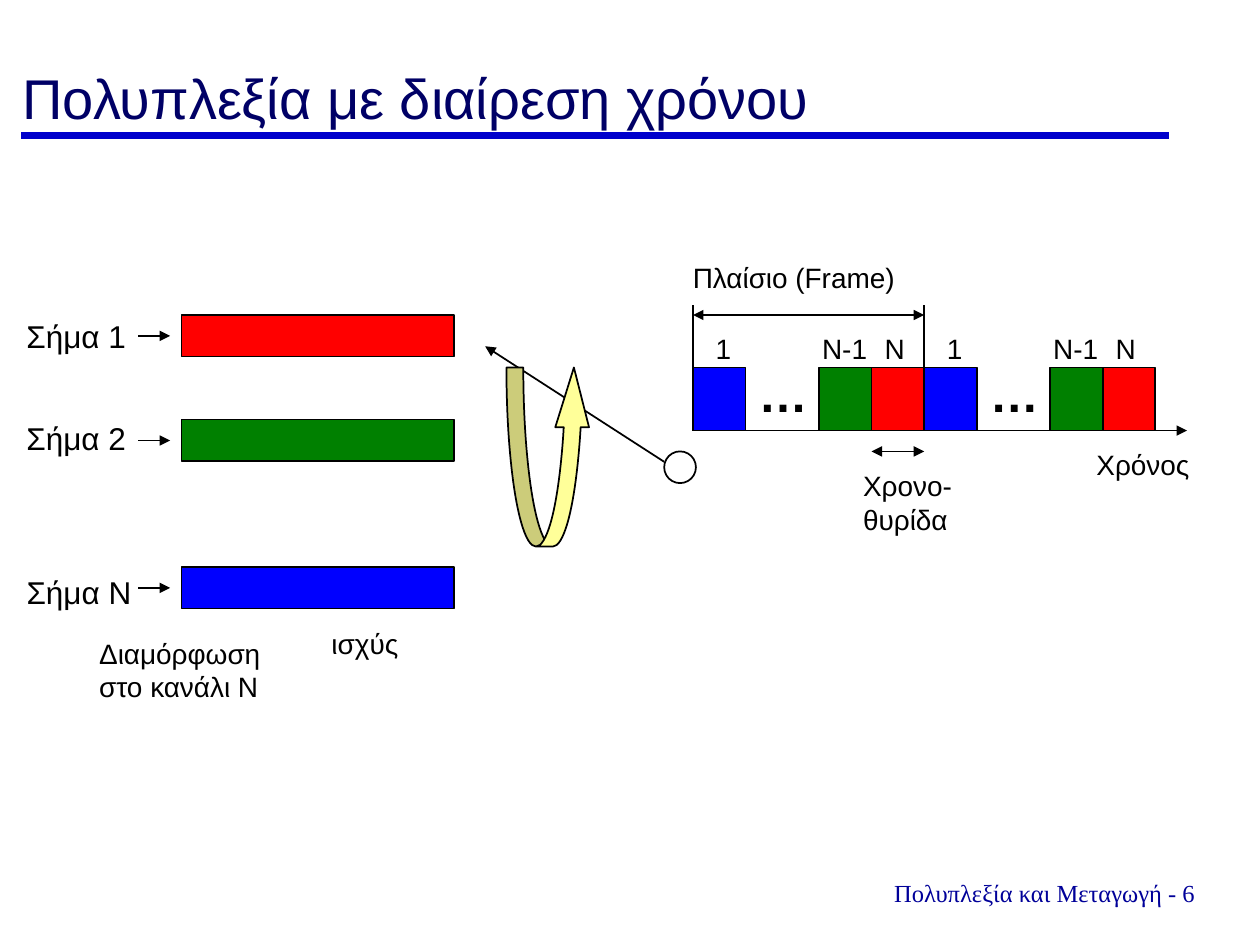
from lxml import etree
from pptx import Presentation
from pptx import util as u
from pptx.dml.color import RGBColor
from pptx.enum import shapes, text
from pptx.oxml.ns import qn

RED, GREEN, BLUE, BLACK = "FF0000", "008000", "0000FF", "000000"
ALIGN, SHAPE = text.PP_ALIGN, shapes.MSO_SHAPE


def rgb(value):
    return RGBColor.from_string(value)


class Deck:
    """Holds the style and the current slide; lengths are in centimetres."""

    font = {"name": "Arial", "size": 16, "bold": False, "color": BLACK}

    def __init__(self, width, height):
        self.prs = Presentation()
        self.prs.slide_width, self.prs.slide_height = u.Cm(width), u.Cm(height)
        self.s = self.prs.slides.add_slide(self.prs.slide_layouts[5])

    def add_words(self, tf, words, align, **font):
        style = {**self.font, **font}
        p = tf.paragraphs[0]
        p.alignment = align
        r = p.add_run()
        r.text = words
        r.font.color.rgb = rgb(style.pop("color"))
        style["size"] = u.Pt(style["size"])
        for name, value in style.items():
            setattr(r.font, name, value)

    def title(self, words, *box, **font):
        sp = self.s.shapes.title
        for name, value in zip(("left", "top", "width", "height"), box):
            setattr(sp, name, u.Cm(value))
        tf = sp.text_frame
        frame = {"vertical_anchor": text.MSO_ANCHOR.BOTTOM, "word_wrap": True,
                 "auto_size": text.MSO_AUTO_SIZE.NONE}
        for name, value in frame.items():
            setattr(tf, name, value)
        self.add_words(tf, words, ALIGN.LEFT, **font)

    def label(self, words, *box, align=ALIGN.RIGHT, wrap=False, **font):
        tf = self.s.shapes.add_textbox(*map(u.Cm, box)).text_frame
        tf.word_wrap = wrap
        tf.auto_size = text.MSO_AUTO_SIZE.SHAPE_TO_FIT_TEXT
        self.add_words(tf, words, align, **font)

    def shape(self, kind, *box, fill=None):
        sp = self.s.shapes.add_shape(kind, *map(u.Cm, box))
        sp.shadow.inherit = False
        if fill:
            sp.fill.solid()
            sp.fill.fore_color.rgb = rgb(fill)
        else:
            sp.fill.background()
        sp.line.color.rgb = rgb(BLACK)
        sp.line.width = u.Pt(1)
        return sp

    def line(self, *ends, color=BLACK, width=1, arrows=()):
        """Draw a straight line; arrows names its headEnd and/or tailEnd."""
        c = self.s.shapes.add_connector(shapes.MSO_CONNECTOR.STRAIGHT, *map(u.Cm, ends))
        c.line.color.rgb = rgb(color)
        c.line.width = u.Pt(width)
        ln = c._element.spPr.find(qn("a:ln"))
        for end in arrows:
            etree.SubElement(ln, qn(f"a:{end}"), type="triangle")
        etree.SubElement(c._element.spPr, qn("a:effectLst"))


def signals(d):
    rows = (("Σήμα 1", 6.35, 6.27, 2.51, RED),
            ("Σήμα 2", 8.46, 8.33, 2.51, GREEN),
            ("Σήμα N", 11.43, 11.43, 2.62, BLUE))
    for name, top, label_top, label_width, fill in rows:
        d.label(name, 0.28, label_top, label_width, 1.02, size=18)
        d.line(2.79, top + 0.42, 3.43, top + 0.42, arrows=["tailEnd"])
        d.shape(SHAPE.RECTANGLE, 3.66, top, 5.5, 0.84, fill=fill)
    d.label("ισχύς", 6.43, 12.5, 1.85, 0.94)
    d.label("Διαμόρφωση στο κανάλι N", 1.75, 12.7, 4.57, 1.63, align=ALIGN.LEFT, wrap=True)


def rotating_switch(d):
    d.shape(SHAPE.OVAL, 13.39, 9.1, 0.64, 0.64)
    d.line(13.39, 9.31, 9.78, 6.98, arrows=["tailEnd"])
    turn = d.shape(SHAPE.CURVED_DOWN_ARROW, 10.21, 7.41, 1.7, 3.61, fill="FFFF99")
    for i, value in enumerate((0.2, 0.4, 0.708)):
        turn.adjustments[i] = value
    turn._element.spPr.xfrm.set("flipV", "1")


def frames(d):
    start, period, slot = 13.97, 4.66, 1.06
    top, height = 7.41, 1.27
    axis = top + height
    both = ["headEnd", "tailEnd"]
    # slot offset, fill, name, name offset, name width
    slots = ((0, BLUE, "1", 0.21, 0.81),
             (2.54, GREEN, "N-1", 2.34, 1.42),
             (3.6, RED, "N", 3.61, 0.91))
    d.line(14.4, axis, 23.93, axis, arrows=["tailEnd"])
    d.label("Χρόνος", 21.82, 8.89, 2.41, 0.94)
    for left in (start, start + period):
        for offset, fill, name, name_offset, name_width in slots:
            d.shape(SHAPE.RECTANGLE, left + offset, top, slot, height, fill=fill)
            d.label(name, left + name_offset, 6.56, name_width, 0.94)
        d.label("…", left + slot, 7.2, 1.5, 1.45, size=28, bold=True)
        d.line(left, axis, left, 6.15)
    d.line(start, 6.35, start + period, 6.35, arrows=both)
    d.label("Πλαίσιο (Frame)", 13.69, 5.13, 4.6, 0.94)
    d.line(start + period - slot, 9.1, start + period, 9.1, arrows=both)
    d.label("Χρονο-θυρίδα", 17.15, 9.32, 2.36, 1.63, align=ALIGN.LEFT, wrap=True)


def main():
    d = Deck(25.4, 19.05)
    d.line(0.43, 2.74, 23.57, 2.74, color="0000CC", width=4)
    d.label("Πολυπλεξία και Μεταγωγή - 6", 17.35, 17.58, 7.42, 0.84, align=ALIGN.CENTER,
            wrap=True, name="Times New Roman", size=14, color="000099")
    d.title("Πολυπλεξία με διαίρεση χρόνου", 0.2, 0.63, 24.56, 2.13, size=32, color="000066")
    signals(d)
    rotating_switch(d)
    frames(d)
    d.prs.save("out.pptx")


if __name__ == "__main__":
    main()
